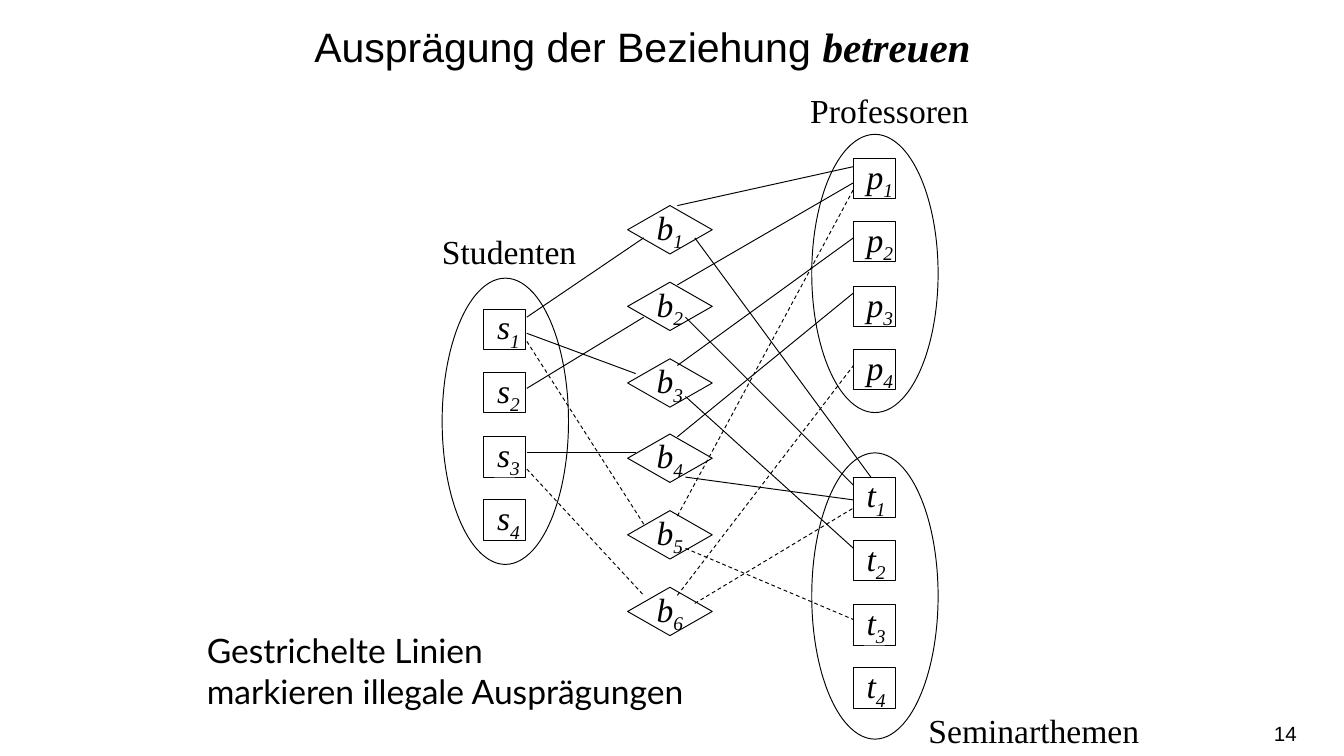
import dataclasses

import pptx
import pptx.dml.color
import pptx.enum.dml
import pptx.enum.shapes
import pptx.enum.text
import pptx.oxml.ns
import pptx.util
from lxml import etree

PX = 9144  # EMU per px, 100 px to the inch
SHAPE = pptx.enum.shapes.MSO_SHAPE
ALIGN = pptx.enum.text.PP_ALIGN
ANCHOR = pptx.enum.text.MSO_ANCHOR
FIT = pptx.enum.text.MSO_AUTO_SIZE


@dataclasses.dataclass(frozen=True)
class Theme:
    ink: pptx.dml.color.RGBColor = pptx.dml.color.RGBColor(0, 0, 0)
    sans: str = "Arial"
    serif: str = "Times New Roman"
    note: str = "Lato"
    title_size: int = 22
    body_size: int = 18
    number_size: int = 11
    line_width: float = 0.5


def apply(target, values):
    for name, value in values.items():
        setattr(target, name, value)


def emu(*lengths):
    return [pptx.util.Emu(v * PX) for v in lengths]


class Diagram:
    def __init__(self, slide, theme):
        self.s, self.theme = slide, theme

    def run(self, p, text, size, font, **fmt):
        r = p.add_run()
        r.text = text
        apply(r.font, {"size": pptx.util.Pt(size), "name": font, **fmt})
        r.font.color.rgb = self.theme.ink
        return r

    def outline(self, line):
        line.color.rgb = self.theme.ink
        line.width = pptx.util.Pt(self.theme.line_width)

    def title(self, box, plain, term):
        sp, t = self.s.shapes.title, self.theme
        apply(sp, dict(zip(("left", "top", "width", "height"), emu(*box))))
        apply(sp.text_frame, {"word_wrap": True, "auto_size": FIT.NONE,
                              "vertical_anchor": ANCHOR.TOP})
        p = sp.text_frame.paragraphs[0]
        apply(p, {"alignment": ALIGN.CENTER, "line_spacing": 1.25})
        self.run(p, plain, t.title_size, t.sans)
        self.run(p, term, t.title_size, t.serif, bold=True, italic=True)

    def text(self, box, lines, font, size=None, align=ALIGN.LEFT, **frame):
        tf = self.s.shapes.add_textbox(*emu(*box)).text_frame
        apply(tf, {"word_wrap": False, "auto_size": FIT.SHAPE_TO_FIT_TEXT, **frame})
        for i, line in enumerate(lines):
            p = tf.add_paragraph() if i else tf.paragraphs[0]
            p.alignment = align
            self.run(p, line, size or self.theme.body_size, font)

    def shape(self, kind, box):
        sp = self.s.shapes.add_shape(kind, *emu(*box))
        sp.shadow.inherit = False
        sp.fill.background()
        self.outline(sp.line)
        return sp

    def node(self, kind, box, letter, index, align):
        tf = self.shape(kind, box).text_frame
        apply(tf, {"word_wrap": False, "vertical_anchor": ANCHOR.MIDDLE})
        p = tf.paragraphs[0]
        p.alignment = align
        font = self.theme.body_size, self.theme.serif
        self.run(p, letter, *font, italic=True)
        sub = self.run(p, str(index), *font, italic=True)
        sub.font._element.set("baseline", "-25000")

    def column(self, kind, letter, count, box, pitch, align=ALIGN.LEFT):
        x, y, w, h = box
        for i in range(count):
            self.node(kind, (x, y + round(i * pitch), w, h), letter, i + 1, align)

    def link(self, x1, y1, x2, y2, dashed=False):
        c = self.s.shapes.add_connector(
            pptx.enum.shapes.MSO_CONNECTOR.STRAIGHT, *emu(x1, y1, x2, y2))
        self.outline(c.line)
        if dashed:
            c.line.dash_style = pptx.enum.dml.MSO_LINE.DASH
        etree.SubElement(c._element.spPr, pptx.oxml.ns.qn("a:effectLst"))


def main():
    prs = pptx.Presentation()
    prs.slide_width = pptx.util.Emu(1000 * PX)
    prs.slide_height = pptx.util.Emu(prs.slide_width * 9 // 16)
    t = Theme()
    d = Diagram(prs.slides.add_slide(prs.slide_layouts[5]), t)

    # Title and slide number
    d.title((103, 2, 750, 44), "Ausprägung der Beziehung ", "betreuen")
    d.text((741, 531, 224, 30), ["14"], t.sans, t.number_size, ALIGN.RIGHT,
           word_wrap=True, auto_size=FIT.NONE, vertical_anchor=ANCHOR.MIDDLE,
           margin_left=0, margin_right=0)

    # Entity sets: name, label box, ellipse, letter, first element
    for name, label, oval, letter, x, y in (
        ("Professoren", (593, 62, 139, 40), (604, 100, 94, 207), "p", 635, 118),
        ("Seminarthemen", (681, 523, 179, 40), (604, 337, 94, 213), "t", 635, 355),
        ("Studenten", (319, 167, 121, 40), (329, 207, 94, 213), "s", 360, 230),
    ):
        d.text(label, [name], t.serif)
        d.column(SHAPE.RECTANGLE, letter, 4, (x, y, 31, 30), 47.3)
        d.shape(SHAPE.OVAL, oval)

    # Relationship instances
    d.column(SHAPE.DIAMOND, "b", 6, (467, 153, 63, 36), 56.8, ALIGN.CENTER)

    # Students to relationships: start y, end x, end y, dashed
    for y1, x2, y2, dashed in (
        (236, 479, 177, False), (248, 473, 278, False), (289, 479, 236, False),
        (337, 473, 337, False), (254, 479, 390, True), (349, 479, 443, True),
    ):
        d.link(392, y1, x2, y2, dashed)

    # Relationships to professors: start y, end y, dashed
    for y1, y2, dashed in (
        (153, 124, False), (212, 136, False), (272, 177, False),
        (325, 218, False), (384, 141, True), (443, 272, True),
    ):
        d.link(504, y1, 635, y2, dashed)

    # Relationships to seminar topics: start, end, dashed
    for x1, y1, x2, y2, dashed in (
        (517, 177, 648, 355, False), (510, 236, 635, 361, False),
        (510, 295, 635, 408, False), (510, 355, 635, 372, False),
        (510, 408, 635, 461, True), (517, 449, 635, 378, True),
    ):
        d.link(x1, y1, x2, y2, dashed)

    # Legend
    d.text((144, 464, 385, 71),
           ["Gestrichelte Linien", "markieren illegale Ausprägungen"], t.note)

    prs.save("out.pptx")


if __name__ == "__main__":
    main()
